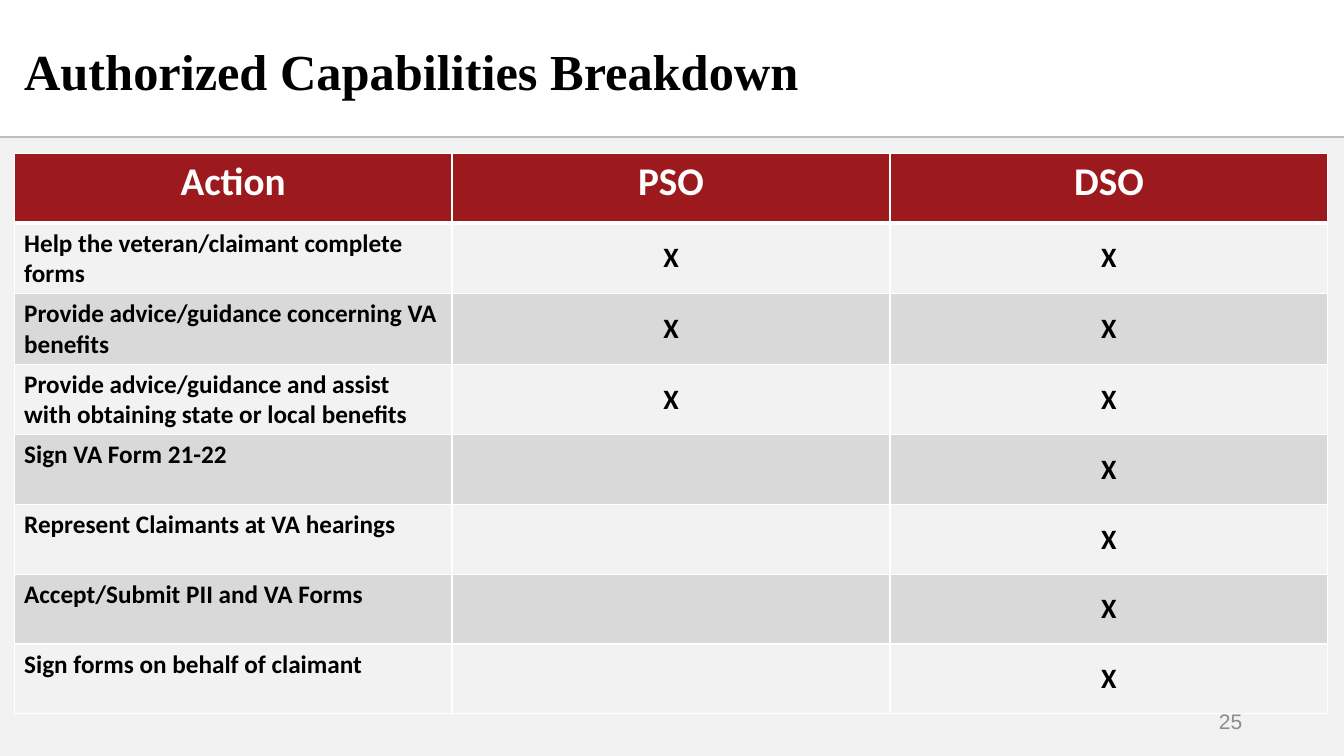
from pptx import Presentation
from pptx.dml.color import RGBColor
from pptx.enum.shapes import MSO_CONNECTOR, MSO_SHAPE
from pptx.enum.text import MSO_ANCHOR, PP_ALIGN
from pptx.oxml.ns import qn
from pptx.util import Inches, Pt
from lxml.etree import SubElement

BLACK = RGBColor(0, 0, 0)
WHITE = RGBColor(0xFF, 0xFF, 0xFF)
RED = RGBColor(0x9C, 0x1A, 0x1E)
LIGHT = RGBColor(0xF2, 0xF2, 0xF2)
BAND = RGBColor(0xD9, 0xD9, 0xD9)
RULE = RGBColor(0xBF, 0xBF, 0xBF)
GRAY = RGBColor(0x8C, 0x8C, 0x8C)

HEADS = ["Action", "PSO", "DSO"]
ACTIONS = [
    ("Help the veteran/claimant complete forms", "X", "X"),
    ("Provide advice/guidance concerning VA benefits", "X", "X"),
    ("Provide advice/guidance and assist with obtaining state or local benefits", "X", "X"),
    ("Sign VA Form 21-22", "", "X"),
    ("Represent Claimants at VA hearings", "", "X"),
    ("Accept/Submit PII and VA Forms", "", "X"),
    ("Sign forms on behalf of claimant", "", "X"),
]


def write(frame, text, size, font, color, bold=False, align=PP_ALIGN.LEFT):
    para = frame.paragraphs[0]
    para.alignment = align
    run = para.add_run()
    run.text = text
    run.font.size = Pt(size)
    run.font.name = font
    run.font.color.rgb = color
    run.font.bold = bold


def add_label(slide, left, top, width, height, anchor, *style):
    box = slide.shapes.add_textbox(Inches(left), Inches(top), Inches(width), Inches(height))
    box.text_frame.word_wrap = True
    box.text_frame.vertical_anchor = anchor
    write(box.text_frame, *style)


def add_panel(slide, left, top, width, height):
    panel = slide.shapes.add_shape(
        MSO_SHAPE.RECTANGLE, Inches(left), Inches(top), Inches(width), Inches(height))
    panel.shadow.inherit = False
    panel.fill.solid()
    panel.fill.fore_color.rgb = LIGHT
    panel.line.fill.background()
    rule = slide.shapes.add_connector(
        MSO_CONNECTOR.STRAIGHT, Inches(left), Inches(top - 0.01),
        Inches(left + width), Inches(top - 0.01))
    rule.line.color.rgb = RULE
    rule.line.width = Pt(1.5)
    SubElement(rule._element.spPr, qn("a:effectLst"))


def set_cell(cell, fill, base):
    props = cell._tc.get_or_add_tcPr()
    for side in ("L", "R", "T", "B"):
        width = base if side == "B" else 1
        edge = SubElement(props, qn(f"a:ln{side}"), w=str(Pt(width)))
        paint = SubElement(edge, qn("a:solidFill"))
        SubElement(paint, qn("a:srgbClr"), val=str(WHITE))
    cell.fill.solid()
    cell.fill.fore_color.rgb = fill


def add_grid(slide, left, top, width, height):
    rows = [HEADS, *ACTIONS]
    table = slide.shapes.add_table(
        len(rows), len(HEADS), Inches(left), Inches(top), Inches(width), Inches(height)).table
    for r, row in enumerate(rows):
        fill = RED if r == 0 else LIGHT if r % 2 else BAND
        for c, text in enumerate(row):
            cell = table.cell(r, c)
            set_cell(cell, fill, 1 if r else 3)
            size = 28 if r == 0 else 20 if c else 18
            if r and c:
                cell.vertical_anchor = MSO_ANCHOR.MIDDLE
            if text:
                write(cell.text_frame, text, size, "Calibri", BLACK if r else WHITE, True,
                      PP_ALIGN.LEFT if r and c == 0 else PP_ALIGN.CENTER)


def main():
    deck = Presentation()
    deck.slide_width = Inches(13.33)
    deck.slide_height = Inches(7.5)
    slide = deck.slides.add_slide(deck.slide_layouts[6])
    add_panel(slide, 0, 1.37, 13.33, 6.13)
    add_label(slide, 9.42, 6.95, 3, 0.4, MSO_ANCHOR.MIDDLE,
              "25", 15, "Arial", GRAY, False, PP_ALIGN.RIGHT)
    add_label(slide, 0.14, 0.35, 8.77, 0.71, MSO_ANCHOR.TOP,
              "Authorized Capabilities Breakdown", 36, "Times New Roman", BLACK, True)
    add_grid(slide, 0.14, 1.52, 13.03, 5.54)
    deck.save("out.pptx")


if __name__ == "__main__":
    main()
